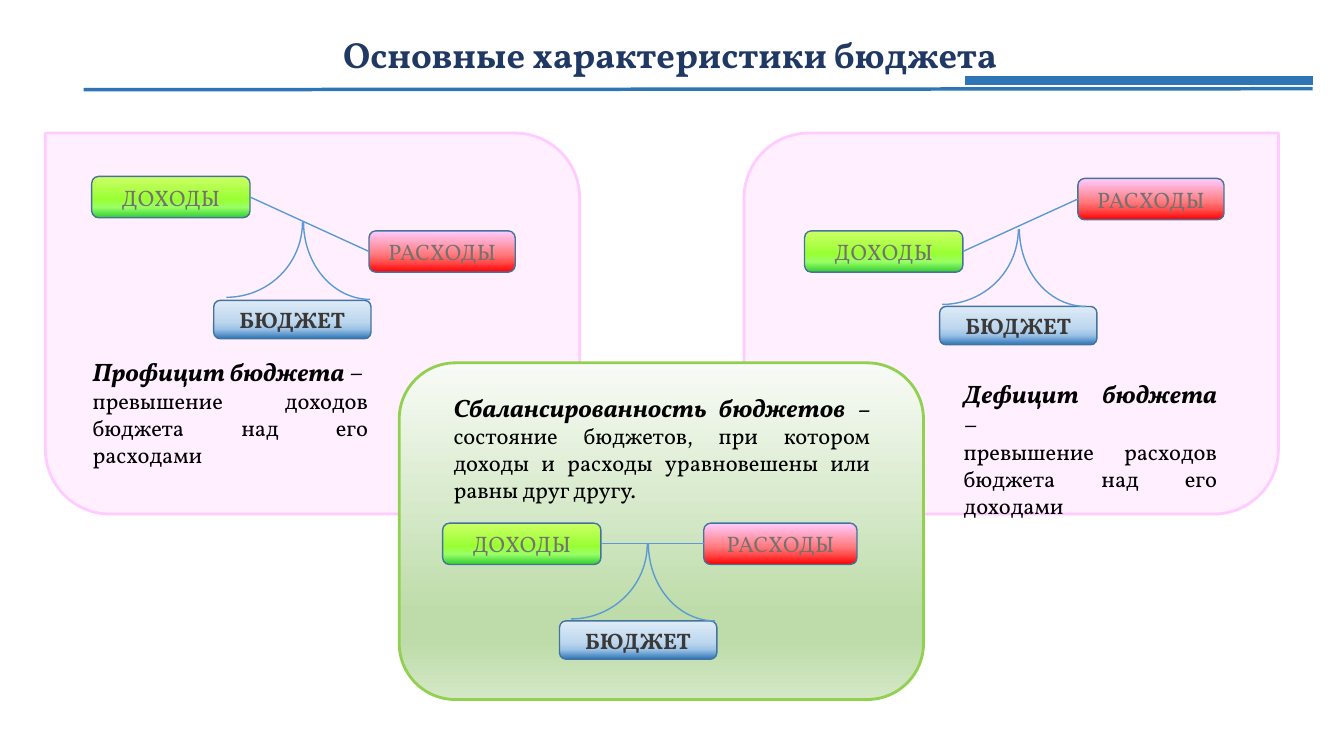
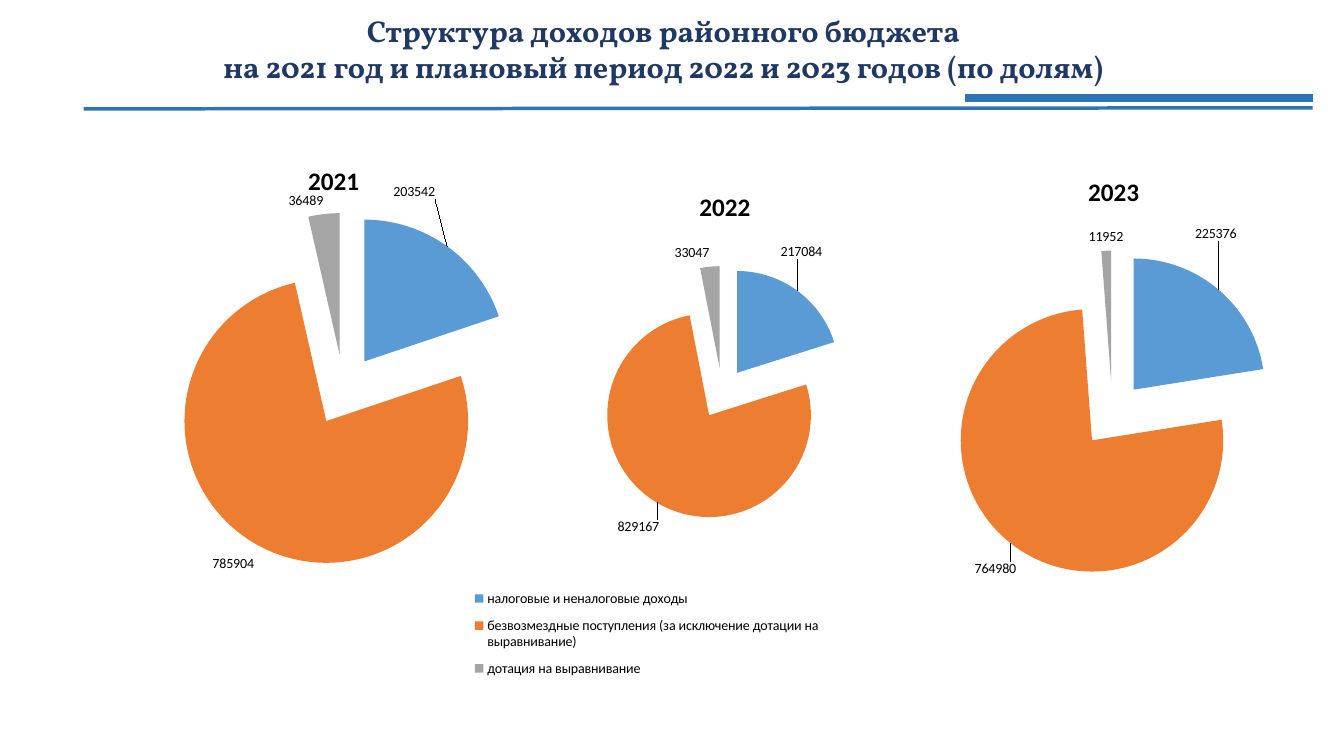
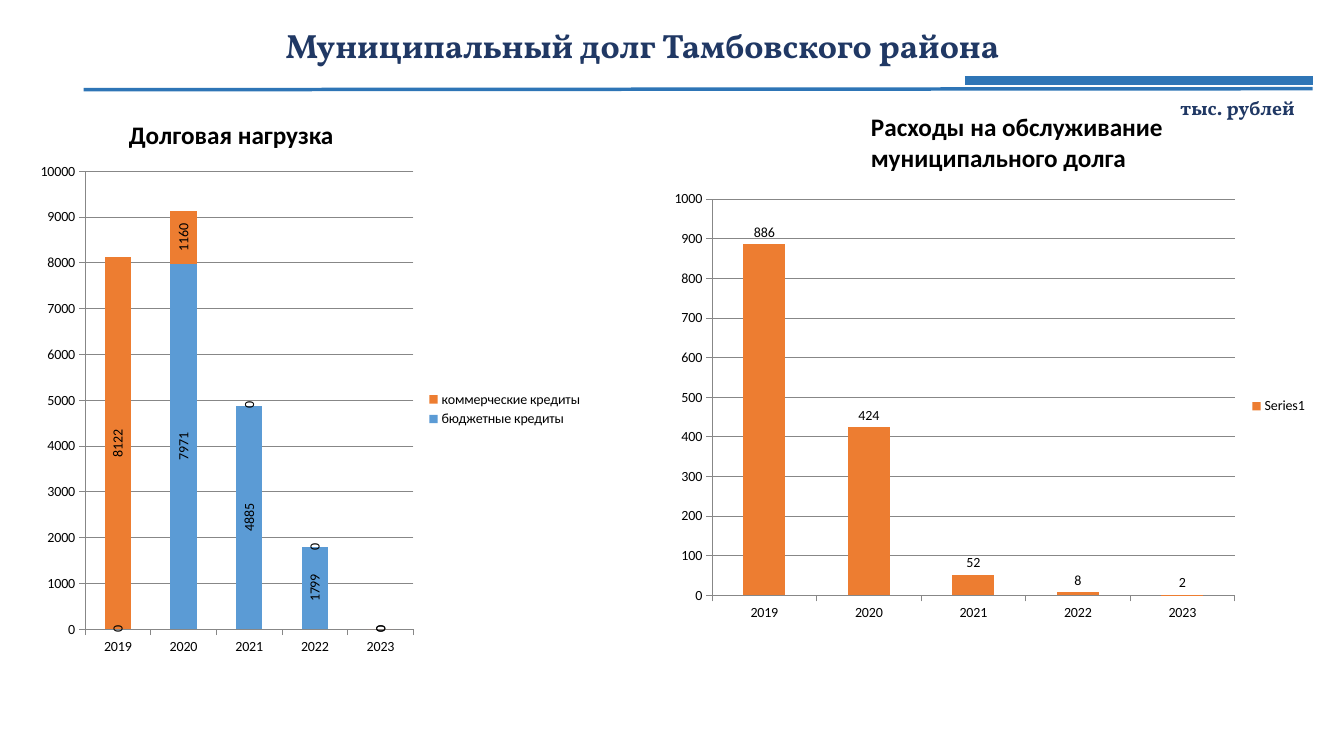
from lxml import etree
from pptx import Presentation
from pptx import util as u
from pptx.chart import data as chart_data
from pptx.dml import color
from pptx.enum import chart as charts, shapes, text
from pptx.oxml import ns

NAVY = color.RGBColor(0x20, 0x38, 0x64)
RULE_BLUE = color.RGBColor(0x2E, 0x75, 0xB6)
BLUE = color.RGBColor(0x5B, 0x9B, 0xD5)
ORANGE = color.RGBColor(0xED, 0x7D, 0x31)
GRAY = color.RGBColor(0xA5, 0xA5, 0xA5)
AXIS_GRAY = color.RGBColor(0x87, 0x87, 0x87)
BLACK = color.RGBColor(0, 0, 0)
PLATE_EDGE = color.RGBColor(0x43, 0x73, 0x9E)
PLATE_TEXT = color.RGBColor(0x76, 0x71, 0x71)
BUDGET_TEXT = color.RGBColor(0x3B, 0x38, 0x38)
PINK = color.RGBColor(0xFF, 0xEF, 0xFF)
PINK_EDGE = color.RGBColor(0xFF, 0xCC, 0xFF)
GREEN_EDGE = color.RGBColor(0x92, 0xD0, 0x50)

INCOME_FILL = [(0, "CCFF66"), (56, "99FF33"), (75, "99FF66"), (100, "33CC33")]
EXPENSE_FILL = [(0, "FFCCFF"), (56, "FF7C80"), (75, "FF5050"), (100, "FF0000")]
BUDGET_FILL = [(0, "DEEBF7"), (56, "BDD7EE"), (75, "9DC3E6"), (100, "2E75B6")]
CARD_FILL = [(0, "F8FBF6"), (74, "BEDCAA"), (83, "BEDCAA"), (100, "D4E8C6")]

SERIF = "Vollkorn"
SANS = "Calibri"
YEARS = ["2019", "2020", "2021", "2022", "2023"]


def inches(values):
    return [u.Inches(value) for value in values]


def format_run(run, size, font_color=BLACK, name=SERIF, bold=False, italic=False):
    run.font.size = u.Pt(size)
    run.font.name = name
    run.font.color.rgb = font_color
    run.font.bold = bold
    run.font.italic = italic


def set_line(shape, line_color, width):
    shape.line.color.rgb = line_color
    shape.line.width = u.Pt(width)


def set_gradient(shape, stops):
    shape.fill.gradient()
    shape.fill.gradient_angle = 270
    stop_list = shape._element.spPr.find(".//" + ns.qn("a:gsLst"))
    for stop in list(stop_list):
        stop_list.remove(stop)
    for position, value in stops:
        stop = etree.SubElement(stop_list, ns.qn("a:gs"), pos=str(position * 1000))
        etree.SubElement(stop, ns.qn("a:srgbClr"), val=value)


def add_outline(slide, preset, box, line_color, width):
    shape = slide.shapes.add_shape(preset, *inches(box))
    shape.shadow.inherit = False
    set_line(shape, line_color, width)
    return shape


def add_line(slide, start, end, line_color, width):
    connector = slide.shapes.add_connector(
        shapes.MSO_CONNECTOR.STRAIGHT, *inches(start + end))
    set_line(connector, line_color, width)
    etree.SubElement(connector._element.spPr, ns.qn("a:effectLst"))
    return connector


def add_slide(presentation, title, box, size, spacing=0.9, rule_top=0.8, rule_gap=0.08):
    slide = presentation.slides.add_slide(presentation.slide_layouts[5])
    shape = slide.shapes.title
    shape.left, shape.top, shape.width, shape.height = inches(box)
    frame = shape.text_frame
    frame.text = title
    frame.word_wrap = True
    frame.auto_size = text.MSO_AUTO_SIZE.NONE
    frame.vertical_anchor = text.MSO_ANCHOR.MIDDLE
    paragraph = frame.paragraphs[0]
    paragraph.alignment = text.PP_ALIGN.CENTER
    paragraph.line_spacing = spacing
    for run in paragraph.runs:
        format_run(run, size, NAVY, bold=True)
    thin_top = rule_top + rule_gap
    add_line(slide, (0.83, thin_top + 0.01), (13.02, thin_top), RULE_BLUE, 2.5)
    add_line(slide, (9.57, rule_top), (13.02, rule_top), RULE_BLUE, 6)
    return slide


def add_text(slide, box, paragraphs, alignment=text.PP_ALIGN.LEFT):
    frame = slide.shapes.add_textbox(*inches(box)).text_frame
    frame.word_wrap = True
    for index, pieces in enumerate(paragraphs):
        paragraph = frame.add_paragraph() if index else frame.paragraphs[0]
        paragraph.alignment = alignment
        for words, style in pieces:
            run = paragraph.add_run()
            run.text = words
            format_run(run, **style)


def add_panel(slide, left, corners):
    panel = add_outline(slide, shapes.MSO_SHAPE.ROUND_2_DIAG_RECTANGLE,
                        (left, 1.32, 5.3, 3.78), PINK_EDGE, 2)
    panel.fill.solid()
    panel.fill.fore_color.rgb = PINK
    for index, corner in enumerate(corners):
        panel.adjustments[index] = corner


def add_plate(slide, label, box, stops, font_color=PLATE_TEXT, bold=False):
    plate = add_outline(slide, shapes.MSO_SHAPE.ROUNDED_RECTANGLE, box, PLATE_EDGE, 1)
    set_gradient(plate, stops)
    frame = plate.text_frame
    frame.text = label
    frame.vertical_anchor = text.MSO_ANCHOR.MIDDLE
    paragraph = frame.paragraphs[0]
    paragraph.alignment = text.PP_ALIGN.CENTER
    format_run(paragraph.runs[0], 16, font_color, bold=bold)
    return plate


def add_arc(slide, box, rotation):
    arc = add_outline(slide, shapes.MSO_SHAPE.ARC, box, BLUE, 1)
    arc.fill.background()
    arc.rotation = rotation


def add_balance(slide, income, expense, budget, arc_corner, expense_width=1.45):
    income_plate = add_plate(slide, "ДОХОДЫ", income + (1.57, 0.41), INCOME_FILL)
    expense_plate = add_plate(slide, "РАСХОДЫ", expense + (expense_width, 0.41), EXPENSE_FILL)
    add_plate(slide, "БЮДЖЕТ", budget + (1.56, 0.38), BUDGET_FILL, BUDGET_TEXT, True)
    beam = add_line(slide, income, expense, BLUE, 1)
    beam.begin_connect(income_plate, 3)
    beam.end_connect(expense_plate, 1)
    left, top = arc_corner
    add_arc(slide, (left, top, 1.49, 1.51), 90)
    add_arc(slide, (left + 1.51, top - 0.02, 1.32, 1.54), 180)


def set_layout(parent, index, edges=False, inner=False, **fractions):
    previous = parent.find(ns.qn("c:layout"))
    if previous is not None:
        parent.remove(previous)
    layout = etree.Element(ns.qn("c:layout"))
    manual = etree.SubElement(layout, ns.qn("c:manualLayout"))
    if inner:
        etree.SubElement(manual, ns.qn("c:layoutTarget"), val="inner")
    if edges:
        for mode in ("c:xMode", "c:yMode"):
            etree.SubElement(manual, ns.qn(mode), val="edge")
    for key, value in fractions.items():
        etree.SubElement(manual, ns.qn("c:" + key), val=str(value))
    parent.insert(index, layout)


def add_chart(slide, kind, box, categories, series):
    source = chart_data.CategoryChartData()
    source.categories = categories
    for name, values in series:
        source.add_series(name, values)
    chart = slide.shapes.add_chart(kind, *inches(box), source).chart
    chart.font.size = u.Pt(10)
    chart.font.name = SANS
    chart.font.color.rgb = BLACK
    chart.has_title = False
    chart.has_legend = False
    return chart


def add_legend(chart):
    chart.has_legend = True
    chart.legend.position = charts.XL_LEGEND_POSITION.RIGHT
    chart.legend.include_in_layout = False


def add_pie(slide, year, box, values, label_shifts, categories=("1", "2", "3")):
    chart = add_chart(slide, charts.XL_CHART_TYPE.PIE, box, categories, [(year, values)])
    chart.has_title = True
    frame = chart.chart_title.text_frame
    frame.text = year
    format_run(frame.paragraphs[0].runs[0], 18, name=SANS, bold=True)
    series = chart.plots[0].series[0]
    explosion = etree.Element(ns.qn("c:explosion"), val="25")
    series._element.find(ns.qn("c:tx")).addnext(explosion)
    for index, fill_color in enumerate((BLUE, ORANGE, GRAY)):
        fill = series.points[index].format.fill
        fill.solid()
        fill.fore_color.rgb = fill_color
    labels = series.data_labels
    labels.show_value = True
    labels.position = charts.XL_LABEL_POSITION.OUTSIDE_END
    for index, (x, y) in enumerate(label_shifts):
        label = series.points[index].data_label
        label.position = charts.XL_LABEL_POSITION.OUTSIDE_END
        label.font.size = u.Pt(10)
        element = series._element.findall(".//" + ns.qn("c:dLbl"))[index]
        set_layout(element, 1, x=x, y=y)
    return chart


def add_columns(slide, kind, box, series, colors, maximum):
    chart = add_chart(slide, kind, box, YEARS, series)
    add_legend(chart)
    plot = chart.plots[0]
    plot.gap_width = 150
    plot.vary_by_categories = False
    for item, fill_color in zip(plot.series, colors):
        item.format.fill.solid()
        item.format.fill.fore_color.rgb = fill_color
        item.data_labels.show_value = True
    axis = chart.value_axis
    axis.minimum_scale = 0
    axis.maximum_scale = maximum
    axis.major_unit = maximum / 10
    axis.has_major_gridlines = True
    for lined in (axis, chart.category_axis, axis.major_gridlines):
        lined.format.line.color.rgb = AXIS_GRAY
        lined.format.line.width = u.Pt(0.75)
    return plot


def build_characteristics(presentation):
    slide = add_slide(presentation, "Основные характеристики бюджета",
                      (0.9, 0.14, 11.5, 0.85), 26)
    add_panel(slide, 7.38, (0.17, 0))
    add_panel(slide, 0.45, (0, 0.17))
    card = add_outline(slide, shapes.MSO_SHAPE.ROUNDED_RECTANGLE,
                       (3.96, 3.6, 5.2, 3.34), GREEN_EDGE, 2)
    set_gradient(card, CARD_FILL)
    add_balance(slide, (4.39, 5.19), (6.98, 5.19), (5.55, 6.16), (4.92, 4.64), 1.52)
    add_balance(slide, (0.91, 1.75), (3.66, 2.29), (2.12, 2.98), (1.5, 1.45))
    add_balance(slide, (7.98, 2.29), (10.69, 1.77), (9.32, 3.04), (8.6, 1.52))

    term = dict(size=18, bold=True, italic=True)
    plain = dict(size=16)
    add_text(slide, (4.4, 3.84, 4.33, 1.21), [[
        ("Сбалансированность бюджетов ", term),
        ("– ", dict(size=16, bold=True, italic=True)),
        ("состояние бюджетов, при котором доходы и расходы уравновешены "
         "или равны друг другу.", plain)]], text.PP_ALIGN.JUSTIFY)
    for name, meaning, box in (
        ("Дефицит бюджета ", "превышение расходов бюджета над его доходами",
         (9.46, 3.7, 2.71, 1.21)),
        ("Профицит бюджета ", "превышение доходов бюджета над его расходами",
         (0.82, 3.49, 2.93, 1.21)),
    ):
        add_text(slide, box, [[(name, term), ("–", dict(size=18))], [(meaning, plain)]],
                 text.PP_ALIGN.JUSTIFY)


def build_income(presentation):
    slide = add_slide(
        presentation,
        "Структура доходов районного бюджета\v"
        "на 2021 год и плановый период 2022 и 2023 годов (по долям)",
        (0.83, 0.1, 11.5, 0.76), 21.6, 1.0, 0.97, 0.1)
    chart = add_pie(
        slide, "2021", (0.29, 1.16, 11.34, 5.96), (203542, 785904, 36489),
        [(-0.05, -0.07), (0, 0.01)],
        ("налоговые и неналоговые доходы",
         "безвозмездные поступления (за исключение дотации на выравнивание)",
         "дотация на выравнивание"))
    add_legend(chart)
    set_layout(chart.chart_title._element, 1, edges=True, x=0.24, y=0.07)
    set_layout(chart.legend._element, 1, edges=True, x=0.37, y=0.77, w=0.34, h=0.18)
    set_layout(chart._chartSpace.chart.plotArea, 0, edges=True, inner=True,
               x=0.06, y=0.16, w=0.43, h=0.59)
    add_pie(slide, "2022", (4.69, 1.71, 5, 3.71), (217084, 829167, 33047),
            [(-0.04, -0.07), (0.01, 0.03)])
    add_pie(slide, "2023", (8.76, 1.54, 4.57, 4.37), (225376, 764980, 11952),
            [(-0.06, -0.1), (0.02, 0.03)])


def build_debt(presentation):
    slide = add_slide(presentation, "Муниципальный долг Тамбовского района",
                      (0.37, 0.03, 12, 0.88), 24)
    heading = dict(size=18, name=SANS, bold=True)
    add_text(slide, (11.61, 0.9, 1.37, 0.34),
             [[("тыс. рублей", dict(size=14, font_color=NAVY, bold=True))]])
    add_text(slide, (1.18, 1.13, 3.24, 0.4), [[("Долговая нагрузка", heading)]])
    add_text(slide, (8.54, 1.06, 3.34, 0.71),
             [[("Расходы на обслуживание муниципального долга", heading)]])
    debt = add_columns(
        slide, charts.XL_CHART_TYPE.COLUMN_STACKED, (0.29, 1.52, 5.59, 5.08),
        [("бюджетные кредиты", (0, 7971, 4885, 1799, 0)),
         ("коммерческие кредиты", (8122, 1160, 0, 0, 0))],
        (BLUE, ORANGE), 10000)
    debt.overlap = 100
    for series in debt.series:
        series.data_labels.font.size = u.Pt(10)
        body = series.data_labels._element.find(".//" + ns.qn("a:bodyPr"))
        body.set("rot", "-5400000")
        body.set("vert", "horz")
    service = add_columns(
        slide, charts.XL_CHART_TYPE.COLUMN_CLUSTERED, (6.56, 1.81, 6.51, 4.44),
        [("Series1", (886, 424, 52, 8, 2))], (ORANGE,), 1000)
    service.series[0].data_labels.position = charts.XL_LABEL_POSITION.OUTSIDE_END


def main():
    presentation = Presentation()
    presentation.slide_width = u.Inches(13.33)
    presentation.slide_height = u.Inches(7.5)
    build_characteristics(presentation)
    build_income(presentation)
    build_debt(presentation)
    presentation.save("out.pptx")


if __name__ == "__main__":
    main()
